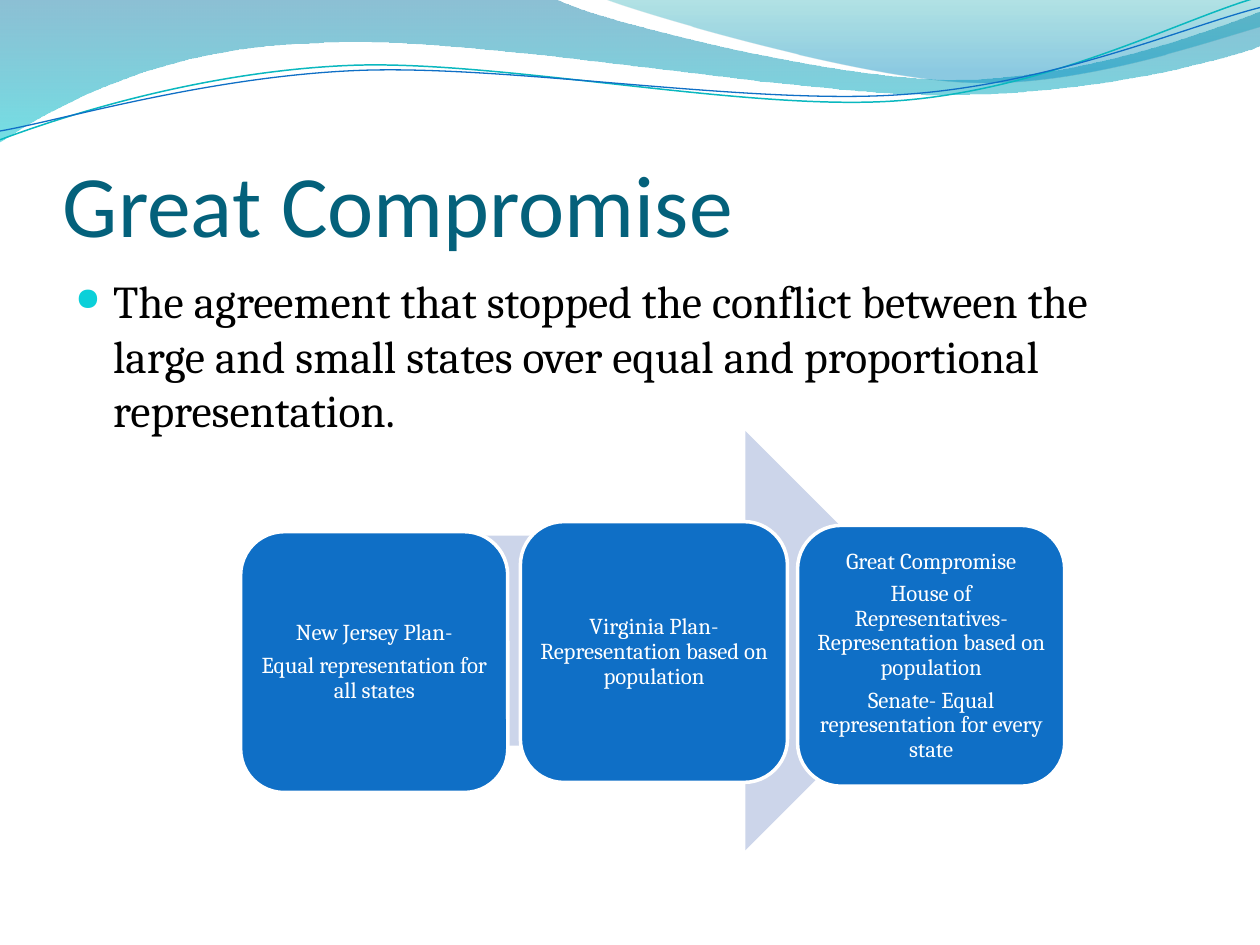
from dataclasses import dataclass
from typing import NamedTuple

from lxml.etree import SubElement
from pptx import Presentation
from pptx.dml.color import RGBColor
from pptx.enum.shapes import MSO_SHAPE as Preset
from pptx.enum.text import MSO_ANCHOR as Anchor, PP_ALIGN as Align
from pptx.oxml.ns import qn
from pptx.util import Pt

PX = 9144
WHITE = RGBColor(0xFF, 0xFF, 0xFF)
BLACK = RGBColor(0x00, 0x00, 0x00)
BLUE = RGBColor(0x0F, 0x6F, 0xC6)
TEAL = RGBColor(0x0A, 0xB8, 0xBF)
CYAN = RGBColor(0x0B, 0xD0, 0xD9)
DARK_TEAL = RGBColor(0x04, 0x61, 0x7B)
PALE_BLUE = RGBColor(0xCC, 0xD5, 0xEA)
WAVE_BLUE = RGBColor(0x00, 0x74, 0xA1)
WAVE_CYAN = RGBColor(0x00, 0xC6, 0xCF)
CREST_TEAL = RGBColor(0x00, 0xA1, 0xA9)
CREST_BLUE = RGBColor(0x00, 0x8B, 0xBF)


class Stop(NamedTuple):
    position: float
    color: RGBColor
    alpha: int


class Box(NamedTuple):
    left: int
    top: int
    width: int
    height: int


@dataclass(frozen=True)
class Wave:
    start: tuple
    segments: tuple
    stops: tuple = ()
    line_color: RGBColor | None = None
    line_width: float = 0


@dataclass(frozen=True)
class Plan:
    left: int
    top: int
    paragraphs: tuple


WAVES = (
    Wave((0, 0), (
        (440, -1),
        (476, 17, 664, 63, 758, 63), (853, 63, 958, 26, 1000, 9),
        (1001, 36),
        (983, 44, 870, 76, 746, 75), (622, 75, 382, 28, 257, 34),
        (129, 36, 46, 83, -1, 113),
        (0, 0),
    ), stops=(Stop(0, WAVE_BLUE, 45), Stop(1, WAVE_CYAN, 55))),
    Wave((479, -1), (
        (509, 11, 682, 62, 769, 65), (856, 69, 961, 32, 1000, 21),
        (1000, 0),
        (479, -1),
    ), stops=(Stop(0, CREST_TEAL, 30), Stop(0.8, CREST_BLUE, 45))),
    Wave((0, 111), (
        (48, 93, 158, 57, 277, 52), (395, 47, 593, 89, 713, 80),
        (833, 71, 938, 15, 998, -2),
    ), line_color=TEAL, line_width=0.85),
    Wave((0, 104), (
        (47, 96, 164, 61, 283, 56), (403, 51, 597, 84, 717, 75),
        (836, 67, 941, 21, 1000, 6),
    ), line_color=BLUE, line_width=0.75),
)

PLAN_WIDTH, PLAN_HEIGHT = 212, 207
PLANS = (
    Plan(191, 422, ("New Jersey Plan-", "Equal representation for all states")),
    Plan(413, 414, ("Virginia Plan-Representation based on population",)),
    Plan(633, 417, (
        "Great Compromise",
        "House of Representatives-Representation based on population",
        "Senate- Equal representation for every state",
    )),
)


def scaled(box: Box) -> list[int]:
    return [value * PX for value in box]


def bend_segments(shape, segments: tuple) -> None:
    lines = iter(list(shape.element.spPr.iter(qn("a:lnTo"))))
    for segment in segments:
        curve = next(lines)
        if len(segment) == 6:
            curve.tag = qn("a:cubicBezTo")
            for _ in range(2):
                line = next(lines)
                curve.append(line[0])
                line.getparent().remove(line)


def draw_wave(slide, wave: Wave) -> None:
    points = [pair for segment in wave.segments for pair in zip(segment[::2], segment[1::2])]
    builder = slide.shapes.build_freeform(*wave.start, scale=PX)
    builder.add_line_segments(points, close=bool(wave.stops))
    shape = builder.convert_to_shape()
    bend_segments(shape, wave.segments)
    shape.shadow.inherit = False
    if not wave.stops:
        shape.fill.background()
        shape.line.color.rgb = wave.line_color
        shape.line.width = Pt(wave.line_width)
        return
    shape.line.fill.background()
    shape.fill.gradient()
    shape.fill.gradient_angle = 270
    for gradient_stop, stop in zip(shape.fill.gradient_stops, wave.stops):
        gradient_stop.position = stop.position
        gradient_stop.color.rgb = stop.color
    colors = list(shape.element.spPr.iter(qn("a:srgbClr")))
    for color, stop in zip(colors, wave.stops):
        SubElement(color, qn("a:alpha"), val=str(stop.alpha * 1000))


def set_insets(frame, left: int, top: int, right: int, bottom: int) -> None:
    frame.margin_left, frame.margin_top = left * PX, top * PX
    frame.margin_right, frame.margin_bottom = right * PX, bottom * PX


def format_runs(paragraph, font: str, size: int, color: RGBColor) -> None:
    for run in paragraph.runs:
        run.font.name = font
        run.font.size = Pt(size)
        run.font.color.rgb = color


def set_spacing(paragraph, tag: str, percent: int):
    properties = paragraph._p.get_or_add_pPr()
    spacing = SubElement(properties, qn(tag))
    SubElement(spacing, qn("a:spcPct"), val=str(percent * 1000))
    return properties


def add_text(slide, box: Box, text: str, font: str, size: int, color: RGBColor):
    frame = slide.shapes.add_textbox(*scaled(box)).text_frame
    frame.word_wrap = True
    frame.text = text
    format_runs(frame.paragraphs[0], font, size, color)
    return frame


def add_bullet(paragraph, color: RGBColor) -> None:
    properties = set_spacing(paragraph, "a:spcBef", 20)
    properties.set("marL", str(30 * PX))
    properties.set("indent", str(-30 * PX))
    bullet_color = SubElement(properties, qn("a:buClr"))
    SubElement(bullet_color, qn("a:srgbClr"), val=str(color))
    SubElement(properties, qn("a:buSzPct"), val="70000")
    SubElement(properties, qn("a:buChar"), char="●")


def add_preset(slide, preset: Preset, box: Box, color: RGBColor):
    shape = slide.shapes.add_shape(preset, *scaled(box))
    shape.shadow.inherit = False
    shape.fill.solid()
    shape.fill.fore_color.rgb = color
    shape.line.fill.background()
    return shape


def draw_plan(slide, plan: Plan) -> None:
    box = Box(plan.left, plan.top, PLAN_WIDTH, PLAN_HEIGHT)
    shape = add_preset(slide, Preset.ROUNDED_RECTANGLE, box, BLUE)
    shape.line.color.rgb = WHITE
    shape.line.width = Pt(2)
    frame = shape.text_frame
    frame.word_wrap = True
    frame.vertical_anchor = Anchor.MIDDLE
    set_insets(frame, 5, 5, 5, 5)
    frame.text = "\n".join(plan.paragraphs)
    for paragraph in frame.paragraphs:
        paragraph.alignment = Align.CENTER
        paragraph.line_spacing = 0.9
        set_spacing(paragraph, "a:spcAft", 35)
        format_runs(paragraph, "Cambria", 13, WHITE)


def main() -> None:
    presentation = Presentation()
    presentation.slide_width, presentation.slide_height = 1000 * PX, 750 * PX
    slide = presentation.slides.add_slide(presentation.slide_layouts[6])
    for wave in WAVES:
        draw_wave(slide, wave)
    title = add_text(slide, Box(50, 77, 900, 125), "Great Compromise", "Calibri", 50, DARK_TEAL)
    title.vertical_anchor = Anchor.BOTTOM
    set_insets(title, 0, 5, 0, 0)
    body = add_text(
        slide, Box(50, 212, 900, 480),
        "The agreement that stopped the conflict between the large and small states "
        "over equal and proportional representation.", "Cambria", 26, BLACK)
    add_bullet(body.paragraphs[0], CYAN)
    add_preset(slide, Preset.RIGHT_ARROW, Box(267, 342, 491, 333), PALE_BLUE)
    for plan in PLANS:
        draw_plan(slide, plan)
    presentation.save("out.pptx")


if __name__ == "__main__":
    main()
